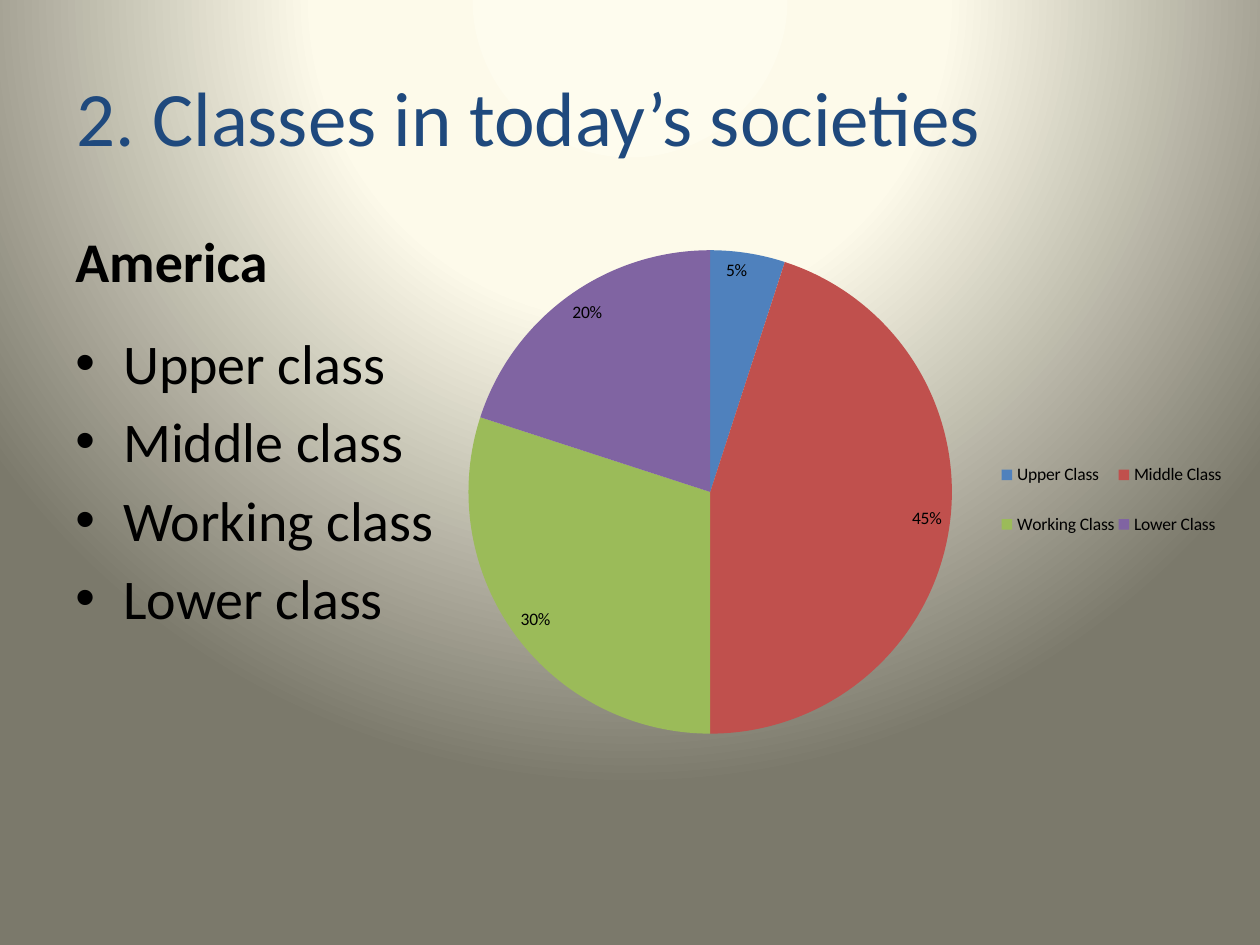
"""Build a slide on social classes with a bullet list and a pie chart."""
from pptx import Presentation
from pptx.chart.data import CategoryChartData
from pptx.dml.color import RGBColor
from pptx.enum.chart import XL_CHART_TYPE, XL_LABEL_POSITION, XL_LEGEND_POSITION
from pptx.enum.text import MSO_ANCHOR
from pptx.oxml import parse_xml
from pptx.oxml.ns import nsdecls, qn
from pptx.util import Inches, Pt

COLORS = {
    "title": "1F497D", "text": "000000",
    "glow": "FEFCEE", "cream": "FDFAEA", "olive": "7B796B",
    "Upper Class": "4F81BD", "Middle Class": "C0504D",
    "Working Class": "9BBB59", "Lower Class": "8064A2",
}
SHARES = {"Upper Class": 0.05, "Middle Class": 0.45, "Working Class": 0.3, "Lower Class": 0.2}


def style_font(font, size, color, bold=False):
    font.name = "Calibri"
    font.size = Pt(size)
    font.bold = bold
    font.color.rgb = RGBColor.from_string(COLORS[color])


def place_in_chart(element, index, target, x, y, w, h):
    for old in element.findall(qn("c:layout")):
        element.remove(old)
    element.insert(index, parse_xml(
        f'<c:layout {nsdecls("c")}><c:manualLayout>{target}'
        '<c:xMode val="edge"/><c:yMode val="edge"/>'
        f'<c:x val="{x}"/><c:y val="{y}"/><c:w val="{w}"/><c:h val="{h}"/>'
        '</c:manualLayout></c:layout>'))


deck = Presentation()
deck.slide_width, deck.slide_height = Inches(10), Inches(7.5)
page = deck.slides.add_slide(deck.slide_layouts[6])

page.background.fill.gradient()
gradient = page.background._cSld.find(".//" + qn("a:gradFill"))
stops = "".join(
    f'<a:gs pos="{share * 1000}"><a:srgbClr val="{COLORS[name]}"/></a:gs>'
    for share, name in ((0, "glow"), (40, "cream"), (100, "olive")))
gradient.getparent().replace(gradient, parse_xml(
    f'<a:gradFill {nsdecls("a")} rotWithShape="1"><a:gsLst>{stops}</a:gsLst><a:path path="circle">'
    '<a:fillToRect l="50000" t="-80000" r="50000" b="180000"/></a:path></a:gradFill>'))

title = page.shapes.add_textbox(Inches(0.51), Inches(0.29), Inches(9), Inches(1.25)).text_frame
title.word_wrap = True
title.vertical_anchor = MSO_ANCHOR.MIDDLE
title.text = "2. Classes in today’s societies"
style_font(title.paragraphs[0].font, 44, "title")

body = page.shapes.add_textbox(Inches(0.5), Inches(1.75), Inches(9), Inches(4.95)).text_frame
body.word_wrap = True
body.text = "America"
style_font(body.paragraphs[0].font, 32, "text", bold=True)
for number, name in enumerate(SHARES):
    para = body.add_paragraph()
    para.text = name.replace("Class", "class")
    para.space_before = Pt(6.4 if number else 19.6)
    settings = para._p.get_or_add_pPr()
    settings.set("marL", str(Inches(0.38)))
    settings.set("indent", str(-Inches(0.38)))
    settings.append(parse_xml(f'<a:buFont {nsdecls("a")} typeface="Arial"/>'))
    settings.append(parse_xml(f'<a:buChar {nsdecls("a")} char="•"/>'))
    style_font(para.font, 32, "text")

data = CategoryChartData(number_format="0%")
data.categories = list(SHARES)
data.add_series("Series 1", list(SHARES.values()))
chart = page.shapes.add_chart(
    XL_CHART_TYPE.PIE, Inches(2.56), Inches(1.86), Inches(7.24), Inches(4.09), data).chart
chart.has_title = False
style_font(chart.font, 10, "text")
chart.has_legend = True
chart.legend.position = XL_LEGEND_POSITION.RIGHT
chart.legend.include_in_layout = False

pie = chart.plots[0]
pie.vary_by_categories = True
for number, name in enumerate(SHARES):
    fill = pie.series[0].points[number].format.fill
    fill.solid()
    fill.fore_color.rgb = RGBColor.from_string(COLORS[name])
pie.has_data_labels = True
labels = pie.data_labels
labels.show_value = True
labels.show_percentage = False
labels.number_format = "0%"
labels.number_format_is_linked = False
labels.position = XL_LABEL_POSITION.INSIDE_END

place_in_chart(pie._element.getparent(), 0, '<c:layoutTarget val="inner"/>', 0.16, 0.03, 0.53, 0.94)
place_in_chart(chart.legend._element, 1, "", 0.74, 0.39, 0.25, 0.25)

deck.save("out.pptx")
